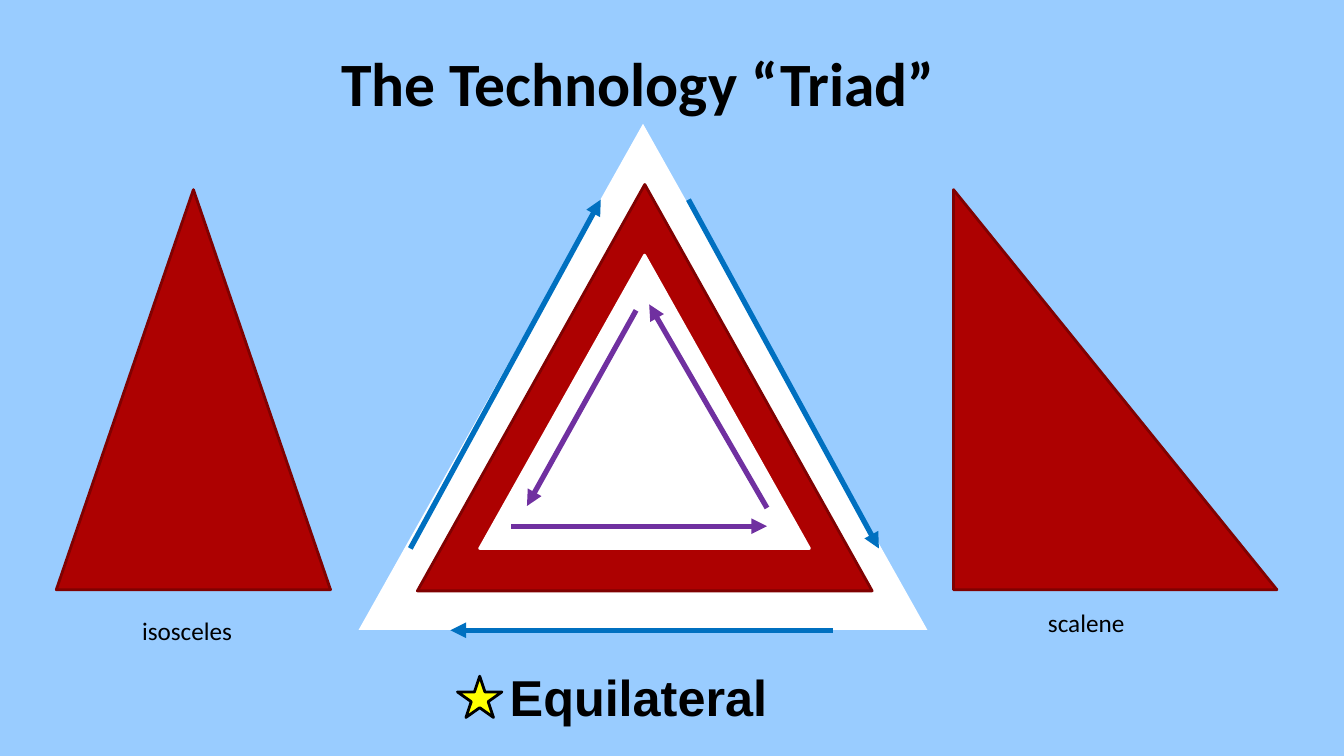
from pptx import Presentation
from pptx import util as u
from pptx.dml import color
from pptx.enum import shapes, text
from pptx.oxml import ns, xmlchemy

HUES = {
    "sky": "99CCFF",
    "white": "FFFFFF",
    "red": "AD0101",
    "dark": "800101",
    "blue": "0070C0",
    "plum": "7030A0",
    "gold": "FFFF00",
    "black": "000000",
}
KINDS = shapes.MSO_SHAPE
HEAD = {"name": "Calibri", "size": u.Pt(44), "bold": True}
FOOT = {"name": "Arial", "size": u.Pt(36), "bold": True}
NOTE = {"name": "Calibri", "size": u.Pt(18), "bold": False}
OUTER = [
    (10.34, 13.82, 15.14, 5.03),
    (17.35, 5.03, 22.15, 13.82),
    (20.98, 15.88, 11.35, 15.88),
]
INNER = [
    (16.03, 7.82, 13.28, 12.75),
    (12.88, 13.26, 19.33, 13.26),
    (19.33, 12.8, 16.36, 7.67),
]


def hue(name):
    return color.RGBColor.from_string(HUES[name])


def lengths(box):
    return [u.Cm(side) for side in box]


def paint(fill, name):
    fill.solid()
    fill.fore_color.rgb = hue(name)


def add_form(slide, kind, box, fill, edge=None):
    form = slide.shapes.add_shape(kind, *lengths(box))
    form.shadow.inherit = False
    paint(form.fill, fill)
    if edge:
        paint(form.line.fill, edge)
        form.line.width = u.Pt(2)
    else:
        form.line.fill.background()


def add_arrow(slide, ends, tint):
    arrow = slide.shapes.add_connector(shapes.MSO_CONNECTOR.STRAIGHT, *lengths(ends))
    paint(arrow.line.fill, tint)
    arrow.line.width = u.Pt(3.75)
    tip = xmlchemy.OxmlElement("a:tailEnd")
    tip.set("type", "triangle")
    arrow.line._get_or_add_ln().append(tip)
    arrow._element.spPr.append(xmlchemy.OxmlElement("a:effectLst"))


def add_words(slide, words, box, style, large=False):
    frame = slide.shapes.add_textbox(*lengths(box)).text_frame
    frame.word_wrap = True
    para = frame.paragraphs[0]
    if large:
        frame.vertical_anchor = text.MSO_ANCHOR.MIDDLE
        para.alignment = text.PP_ALIGN.CENTER
        para.line_spacing = 0.9
    run = para.add_run()
    run.text = words
    for key, value in style.items():
        setattr(run.font, key, value)
    run.font.color.rgb = hue("black")


def main():
    deck = Presentation()
    deck.slide_width, deck.slide_height = lengths((33.87, 19.05))
    slide = deck.slides.add_slide(deck.slide_layouts[6])
    paint(slide.background.fill, "sky")

    add_form(slide, KINDS.ISOSCELES_TRIANGLE, (9.04, 3.12, 14.33, 12.75), "white")
    add_words(slide, "The Technology “Triad”", (0, 1.02, 32.18, 2.31), HEAD, True)
    add_words(slide, "Equilateral ", (0, 16.23, 32.54, 2.84), FOOT, True)
    add_form(slide, KINDS.ISOSCELES_TRIANGLE, (10.52, 4.65, 11.46, 10.24), "red", "dark")
    add_form(slide, KINDS.ISOSCELES_TRIANGLE, (12.09, 6.43, 8.31, 7.39), "white", "white")

    for tint, ring in (("blue", OUTER), ("plum", INNER)):
        for ends in ring:
            add_arrow(slide, ends, tint)

    add_form(slide, KINDS.ISOSCELES_TRIANGLE, (1.42, 4.78, 6.91, 10.08), "red", "dark")
    add_words(slide, "isosceles", (3.33, 15.37, 3.07, 1.02), NOTE)
    add_form(slide, KINDS.RIGHT_TRIANGLE, (24.03, 4.78, 8.15, 10.08), "red", "dark")
    add_words(slide, "scalene", (26.16, 15.19, 3.07, 1.02), NOTE)
    add_form(slide, KINDS.STAR_5_POINT, (11.53, 17.04, 1.12, 1.04), "gold", "black")

    deck.save("out.pptx")


if __name__ == "__main__":
    main()
